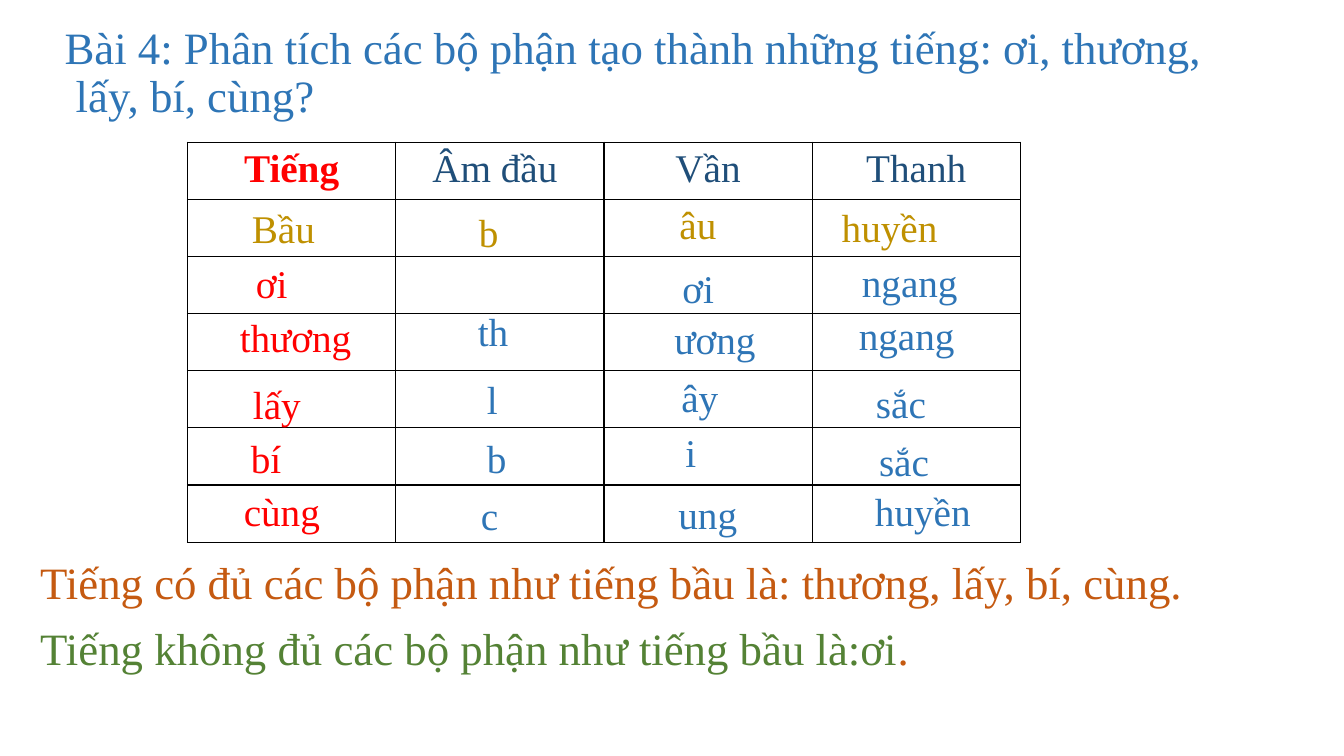
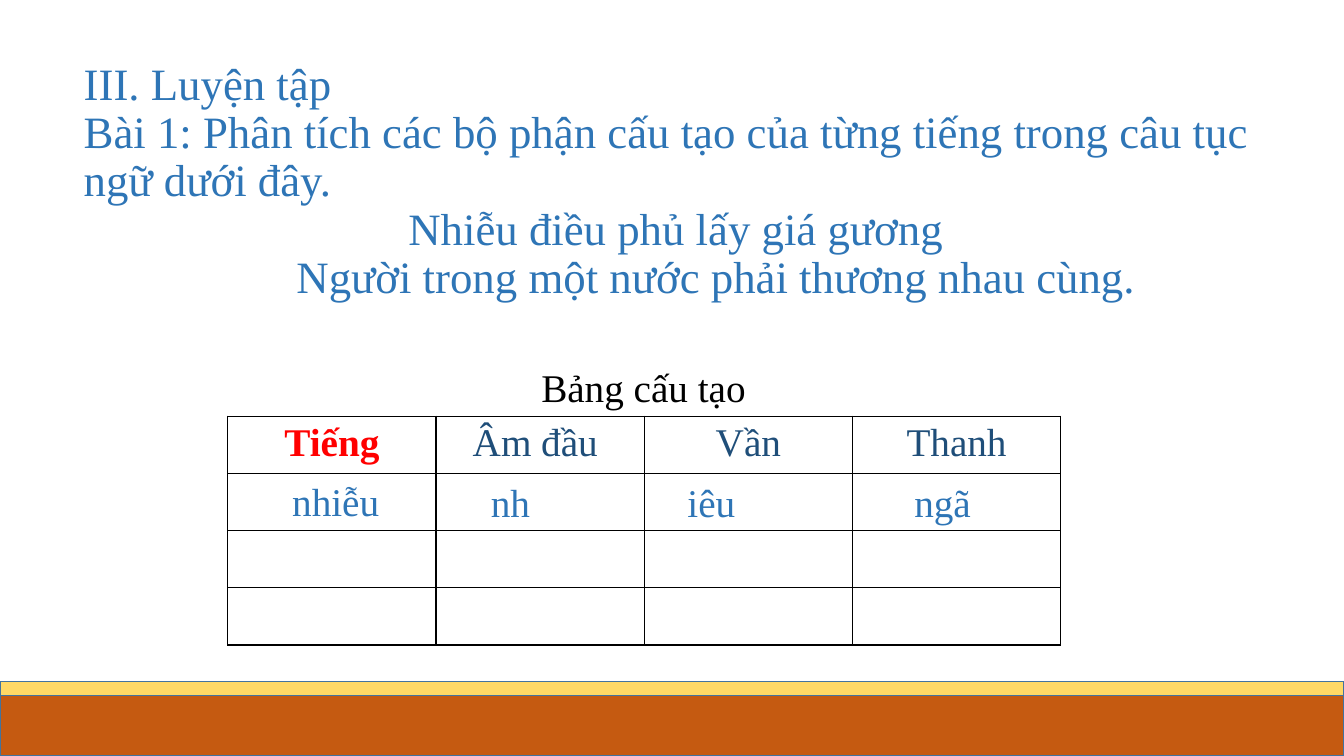
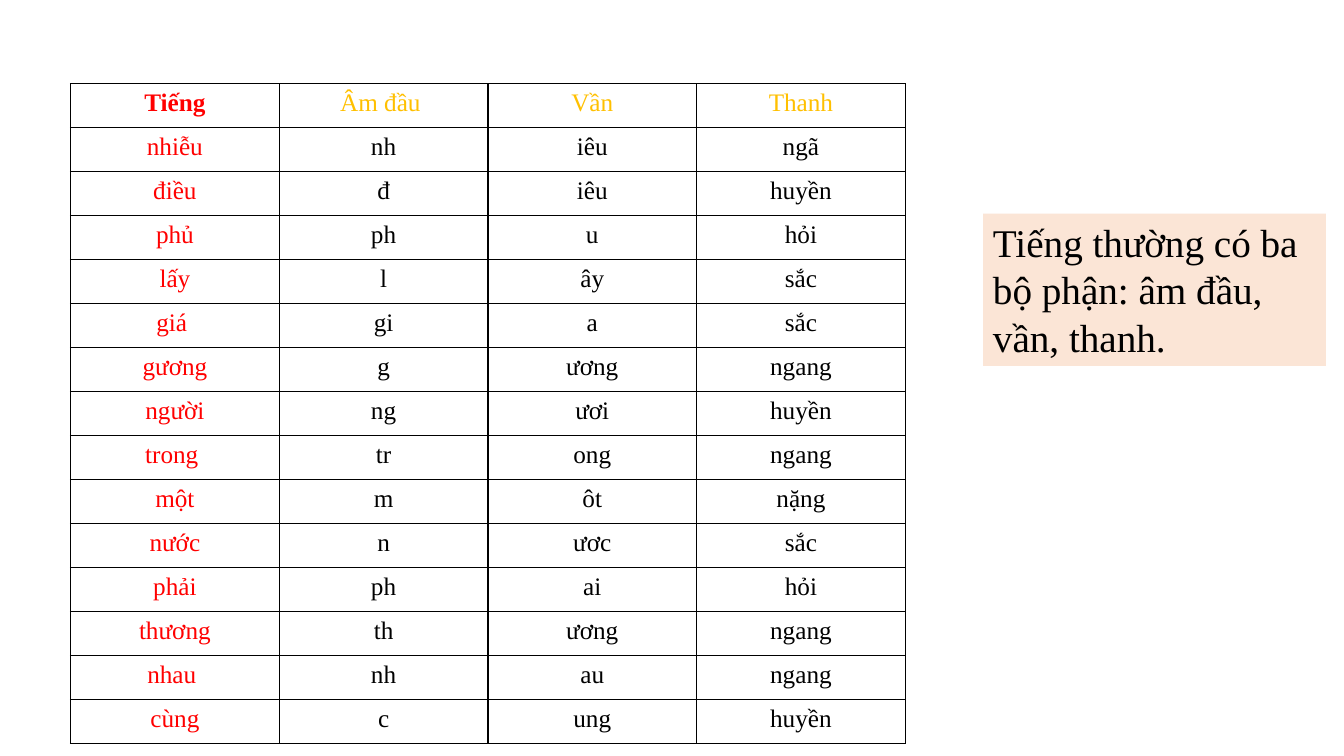
from lxml import etree
from pptx import Presentation
from pptx.dml.color import RGBColor
from pptx.enum import shapes, text
from pptx.oxml import ns
from pptx.util import Inches, Pt

FONT = "Times New Roman"
BLUE, NAVY, RED, GOLD = "2E75B6", "1F4E79", "FF0000", "BF9000"
AMBER, ORANGE, GREEN, BLACK = "FFC000", "C55A11", "548235", "000000"
YELLOW, PEACH, EDGE = "FFD966", "FBE5D6", "43739E"


def style(p, size, color, bold=False):
    p.font.name, p.font.size, p.font.bold = FONT, Pt(size), bold
    p.font.color.rgb = RGBColor.from_string(color)


def add_text(s, content, x, y, w, h, size, color):
    sp = s.shapes.add_textbox(Inches(x), Inches(y), Inches(w), Inches(h))
    tf = sp.text_frame
    tf.word_wrap = True
    tf.text = content
    style(tf.paragraphs[0], size, color)
    return sp


prs = Presentation()
prs.slide_width, prs.slide_height = Inches(13.33), Inches(7.5)
title_only, blank = prs.slide_layouts[5], prs.slide_layouts[6]
parts, practice, answers = [prs.slides.add_slide(layout) for layout in (title_only, title_only, blank)]

titles = [
    (parts, (0.54, 0.2, 11.59, 1.07), [
        ("Bài 4: Phân tích các bộ phận tạo thành những tiếng: ơi, thương,\v lấy, bí, cùng?", 0),
    ]),
    (practice, (0.73, 0.55, 11.98, 2.52), [
        ("III. Luyện tập\vBài 1: Phân tích các bộ phận cấu tạo của từng tiếng trong câu tục\vngữ dưới đây.", 0),
        ("Nhiễu điều phủ lấy giá gương", 3.22),
        ("Người trong một nước phải thương nhau cùng.", 2.11),
    ]),
]
for s, box, lines in titles:
    sp = s.shapes.title
    sp.left, sp.top, sp.width, sp.height = [Inches(v) for v in box]
    tf = sp.text_frame
    tf.word_wrap = True
    tf.auto_size = text.MSO_AUTO_SIZE.NONE
    tf.vertical_anchor = text.MSO_ANCHOR.MIDDLE
    tf.text = "\n".join(line for line, indent in lines)
    for p, (line, indent) in zip(tf.paragraphs, lines):
        style(p, 32, BLUE)
        p.alignment = text.PP_ALIGN.LEFT
        p.line_spacing = 0.9
        p._p.get_or_add_pPr().set("marL", str(Inches(indent)))

for top, color in ((6.76, YELLOW), (6.9, ORANGE)):
    band = practice.shapes.add_shape(
        shapes.MSO_SHAPE.RECTANGLE, 0, Inches(top), prs.slide_width, Inches(7.5 - top))
    band.shadow.inherit = False
    band.fill.solid()
    band.fill.fore_color.rgb = RGBColor.from_string(color)
    band.line.color.rgb = RGBColor.from_string(EDGE)
    band.line.width = Pt(1)

header = ["Tiếng", "Âm đầu ", "Vần", "Thanh"]
syllables = [
    ["nhiễu", "nh", "iêu", "ngã"],
    ["điều", "đ", "iêu", "huyền"],
    ["phủ", "ph", "u", "hỏi"],
    ["lấy", "l", "ây", "sắc"],
    ["giá ", "gi", "a", "sắc"],
    ["gương", "g", "ương", "ngang"],
    ["người", "ng", "ươi", "huyền"],
    ["trong ", "tr", "ong", "ngang"],
    ["một", "m", "ôt", "nặng"],
    ["nước", "n", "ươc", "sắc"],
    ["phải", "ph", "ai", "hỏi"],
    ["thương", "th", "ương", "ngang"],
    ["nhau ", "nh", "au", "ngang"],
    ["cùng", "c", "ung", "huyền"],
]
empty = [""] * 4
tables = [
    (parts, (1.86, 1.41, 8.26, 3.97), [header] + [empty] * 6, 28, NAVY),
    (practice, (2.26, 4.13, 8.26, 2.27), [header] + [empty] * 3, 28, NAVY),
    (answers, (0.7, 0.83, 8.28, 6.55), [header] + syllables, 18, AMBER),
]
for s, box, rows, size, header_color in tables:
    x, y, w, h = [Inches(v) for v in box]
    table = s.shapes.add_table(len(rows), 4, x, y, w, h).table
    table.first_row = table.horz_banding = False
    for i, row in enumerate(rows):
        for j, value in enumerate(row):
            cell = table.cell(i, j)
            tcPr = cell._tc.get_or_add_tcPr()
            for side in ("lnL", "lnR", "lnT", "lnB"):
                ln = etree.SubElement(tcPr, ns.qn("a:" + side), w=str(Pt(1)))
                fill = etree.SubElement(ln, ns.qn("a:solidFill"))
                etree.SubElement(fill, ns.qn("a:srgbClr"), val=BLACK)
            cell.fill.background()
            if value:
                cell.text = value
                p = cell.text_frame.paragraphs[0]
                p.alignment = text.PP_ALIGN.CENTER
                color = RED if j == 0 else header_color if i == 0 else BLACK
                style(p, size, color, bold=i == j == 0)

words = [
    (parts, GOLD, [
        ("Bầu", 2.4, 1.98, 0.99), ("b", 4.65, 2.02, 0.75),
        ("âu", 6.64, 1.94, 0.75), ("huyền", 8.25, 1.97, 1.62),
    ]),
    (parts, RED, [
        ("ơi", 2.44, 2.52, 0.75), ("thương", 2.28, 3.06, 1.32), ("lấy", 2.41, 3.72, 0.68),
        ("bí", 2.39, 4.26, 0.51), ("cùng", 2.32, 4.79, 0.96),
    ]),
    (parts, BLUE, [
        ("ơi", 6.67, 2.57, 0.52), ("ngang", 8.45, 2.51, 1.16),
        ("th", 4.64, 3, 0.52), ("ương", 6.59, 3.08, 1.01), ("ngang", 8.42, 3.04, 1.16),
        ("l", 4.73, 3.67, 0.32), ("ây", 6.66, 3.65, 0.57), ("sắc", 8.59, 3.71, 0.7),
        ("b", 4.73, 4.26, 0.4), ("i", 6.7, 4.2, 0.32), ("sắc", 8.62, 4.29, 0.7),
        ("c", 4.67, 4.83, 0.38), ("ung", 6.63, 4.82, 0.79), ("huyền", 8.58, 4.79, 1.16),
    ]),
    (practice, BLUE, [
        ("nhiễu", 2.8, 4.69, 1.07), ("nh", 4.77, 4.7, 0.6),
        ("iêu", 6.72, 4.7, 0.68), ("ngã", 8.97, 4.7, 0.77),
    ]),
    (practice, BLACK, [("Bảng cấu tạo", 5.27, 3.56, 2.25)]),
]
for s, color, items in words:
    for word, x, y, w in items:
        add_text(s, word, x, y, w, 0.57, 28, color)

conclusions = [
    ("Tiếng có đủ các bộ phận như tiếng bầu là: thương, lấy, bí, cùng", 5.51, ORANGE),
    ("Tiếng không đủ các bộ phận như tiếng bầu là:ơi", 6.16, GREEN),
]
for sentence, top, color in conclusions:
    tf = add_text(parts, sentence, 0.3, top, 12.06, 0.59, 32, color).text_frame
    tf.vertical_anchor = text.MSO_ANCHOR.MIDDLE
    p = tf.paragraphs[0]
    p.line_spacing = 0.9
    r = p.add_run()
    r.text = "."
    r.font.color.rgb = RGBColor.from_string(ORANGE)

note = add_text(answers, "Tiếng thường có ba bộ phận: âm đầu, vần, thanh.", 9.75, 2.12, 3.4, 1.51, 28, BLACK)
note.fill.solid()
note.fill.fore_color.rgb = RGBColor.from_string(PEACH)

prs.save("out.pptx")
